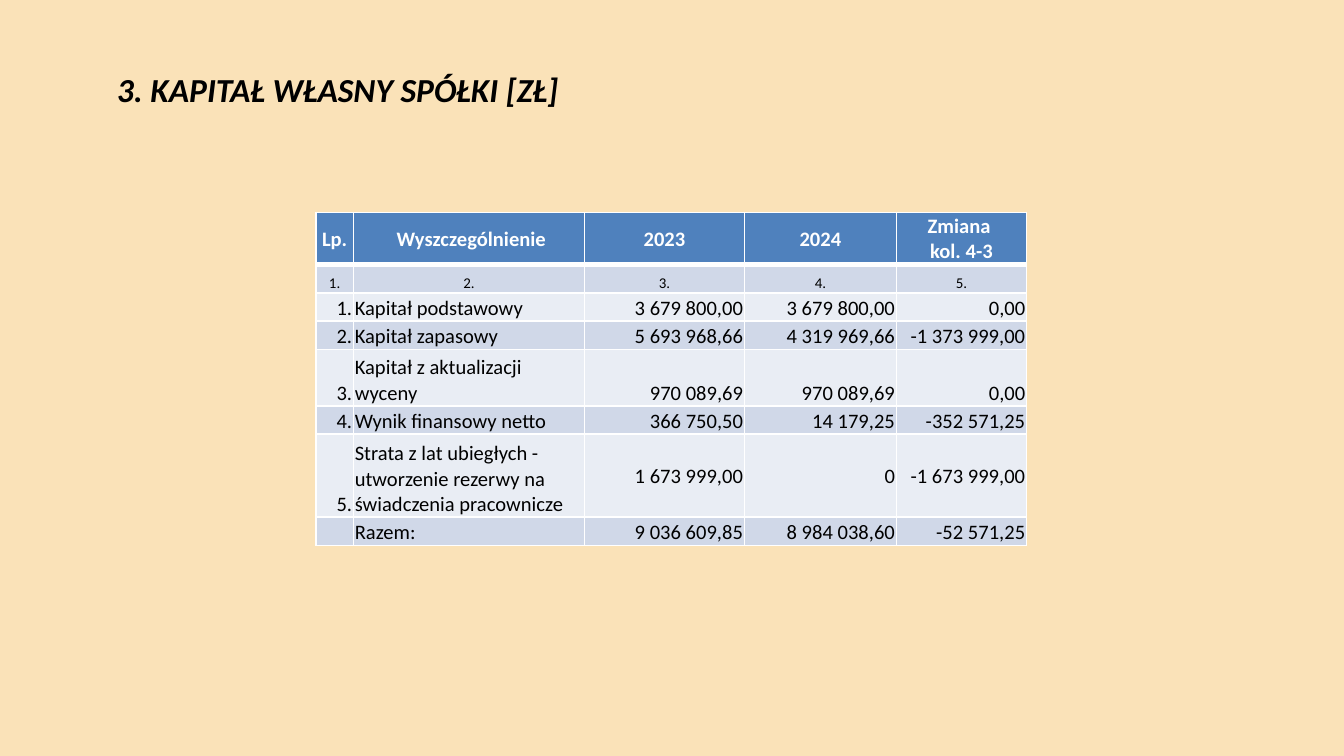
from dataclasses import dataclass

from lxml import etree
from pptx import Presentation
from pptx.dml.color import RGBColor
from pptx.enum.text import MSO_ANCHOR, PP_ALIGN
from pptx.oxml.ns import qn
from pptx.util import Inches, Pt

LEFT, CENTER, RIGHT = PP_ALIGN.LEFT, PP_ALIGN.CENTER, PP_ALIGN.RIGHT
TOP, MIDDLE, BOTTOM = MSO_ANCHOR.TOP, MSO_ANCHOR.MIDDLE, MSO_ANCHOR.BOTTOM


@dataclass(frozen=True)
class Theme:
    """Colours, font and type sizes of the deck."""
    background: str = "FAE2B8"
    ink: str = "000000"
    white: str = "FFFFFF"
    header: str = "4F81BD"
    bands: tuple = ("D0D8E8", "E9EDF4")
    font: str = "Calibri"
    title_size: int = 18
    body_size: int = 11
    index_size: int = 8
    border: int = 1
    header_border: int = 3


THEME = Theme()
PAGE_WIDTH = 10
PAGE_HEIGHT = PAGE_WIDTH * 9 / 16
TITLE = "3. KAPITAŁ WŁASNY SPÓŁKI [ZŁ]"
COLUMN_WIDTHS = (0.28, 1.72, 1.19, 1.13, 0.97)
ROW_HEIGHTS = (0.39, 0.21, 0.21, 0.21, 0.42, 0.21, 0.62, 0.21)
ROWS = (
    ("Lp.", " Wyszczególnienie", "2023", "2024", "Zmiana \nkol. 4-3"),
    ("1.", "2.", "3.", "4.", "5."),
    ("1.", "Kapitał podstawowy", "3 679 800,00", "3 679 800,00", "0,00"),
    ("2.", "Kapitał zapasowy", "5 693 968,66", "4 319 969,66", "-1 373 999,00"),
    ("3.", "Kapitał z aktualizacji wyceny", "970 089,69", "970 089,69", "0,00"),
    ("4.", "Wynik finansowy netto", "366 750,50", "14 179,25", "-352 571,25"),
    ("5.", "Strata z lat ubiegłych - utworzenie rezerwy na świadczenia pracownicze",
     "1 673 999,00", "0", "-1 673 999,00"),
    ("", "Razem:", "9 036 609,85", "8 984 038,60", "-52 571,25"),
)
HEADER_ROW, INDEX_ROW, LOSS_ROW = 0, 1, 6
NAME_COLUMN = 1


def add_text(frame, text, size, color, bold=False, italic=False, align=LEFT):
    """Write text into the first paragraph, one run per line."""
    para = frame.paragraphs[0]
    para.alignment = align
    for number, line in enumerate(text.split("\n") if text else ()):
        if number:
            para.add_line_break()
        span = para.add_run()
        span.text = line
        font = span.font
        font.name, font.size = THEME.font, Pt(size)
        font.bold, font.italic = bold, italic
        font.color.rgb = RGBColor.from_string(color)
    etree.SubElement(para._p, qn("a:endParaRPr"), sz=str(size * 100))


def add_title(page):
    """Place the slide heading."""
    box = page.shapes.add_textbox(Inches(0.78), Inches(0.47), Inches(8.5), Inches(0.47))
    frame = box.text_frame
    frame.word_wrap = True
    frame.vertical_anchor = TOP
    frame.margin_left = frame.margin_right = Inches(0.09)
    frame.margin_top = frame.margin_bottom = Inches(0.04)
    add_text(frame, TITLE, THEME.title_size, THEME.ink, bold=True, italic=True)


def set_borders(cell, widths):
    """Draw white cell borders, with widths given by side."""
    properties = cell._tc.get_or_add_tcPr()
    for position, (side, width) in enumerate(widths.items()):
        line = etree.Element(qn(f"a:ln{side}"), w=str(Pt(width)))
        fill = etree.SubElement(line, qn("a:solidFill"))
        etree.SubElement(fill, qn("a:srgbClr"), val=THEME.white)
        properties.insert(position, line)


def cell_layout(row, column):
    """Return the alignment and anchor of a cell."""
    if row == HEADER_ROW:
        return CENTER, MIDDLE
    if row == INDEX_ROW:
        return CENTER, BOTTOM
    if column == NAME_COLUMN:
        return LEFT, BOTTOM
    return RIGHT, MIDDLE if row == LOSS_ROW and column > NAME_COLUMN else BOTTOM


def fill_cell(cell, row, column, text):
    """Style one table cell and write its text."""
    is_header = row == HEADER_ROW
    align, cell.vertical_anchor = cell_layout(row, column)
    cell.margin_left = cell.margin_right = cell.margin_top = Inches(0.01)
    cell.margin_bottom = 0
    cell.fill.solid()
    fill = THEME.header if is_header else THEME.bands[(row - 1) % 2]
    cell.fill.fore_color.rgb = RGBColor.from_string(fill)
    size = THEME.index_size if row == INDEX_ROW else THEME.body_size
    color = THEME.white if is_header else THEME.ink
    add_text(cell.text_frame, text, size, color, bold=is_header, align=align)
    widths = dict.fromkeys("LRTB", THEME.border)
    if is_header:
        widths["B"] = THEME.header_border
    if row == INDEX_ROW:
        widths["T"] = THEME.header_border
    set_borders(cell, widths)


def add_capital_table(page):
    """Build the equity table."""
    table = page.shapes.add_table(
        len(ROWS), len(COLUMN_WIDTHS), Inches(2.35), Inches(1.58),
        Inches(sum(COLUMN_WIDTHS)), Inches(sum(ROW_HEIGHTS))).table
    for column, width in zip(table.columns, COLUMN_WIDTHS):
        column.width = Inches(width)
    for row, height in zip(table.rows, ROW_HEIGHTS):
        row.height = Inches(height)
    for row, values in enumerate(ROWS):
        for column, text in enumerate(values):
            fill_cell(table.cell(row, column), row, column, text)


def main():
    """Create the deck and save it."""
    deck = Presentation()
    deck.slide_width, deck.slide_height = Inches(PAGE_WIDTH), Inches(PAGE_HEIGHT)
    page = deck.slides.add_slide(deck.slide_layouts[6])
    page.background.fill.solid()
    page.background.fill.fore_color.rgb = RGBColor.from_string(THEME.background)
    add_title(page)
    add_capital_table(page)
    deck.save("out.pptx")


if __name__ == "__main__":
    main()
